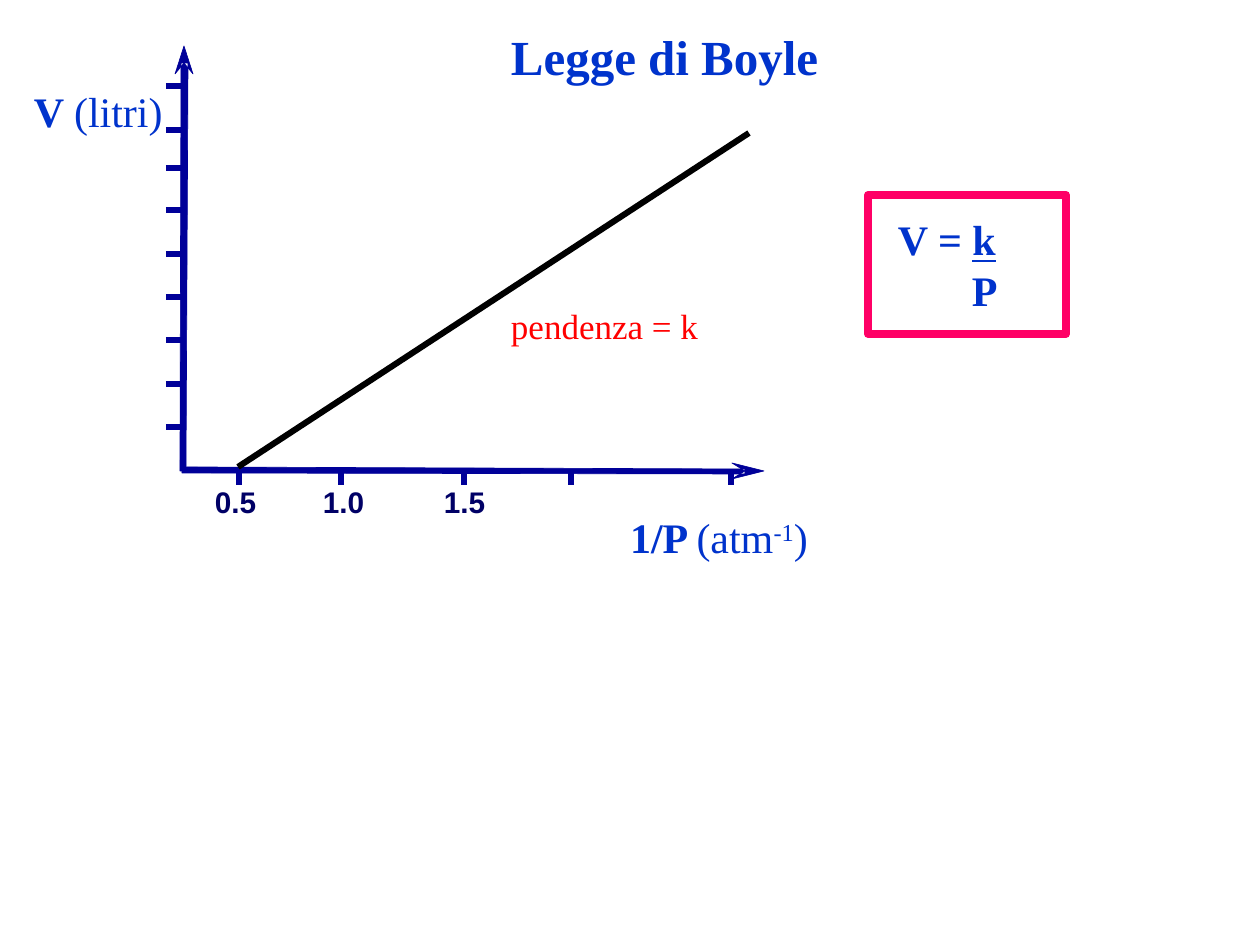
from pptx import Presentation
from pptx.dml.color import RGBColor
from pptx.enum.shapes import MSO_CONNECTOR, MSO_SHAPE
from pptx.oxml.ns import qn
from pptx.util import Inches, Pt
from lxml import etree

PX = 7257  # EMU in one px, at 126 px to the inch
SERIF = "Times New Roman"
BLUE, NAVY, DARK, RED, PINK, BLACK = "0033CC", "000099", "000066", "FF0000", "FF0066", "000000"


def add_run(paragraph, text, size=24, font=SERIF, color=BLUE, bold=False, underline=False, superscript=False):
    run = paragraph.add_run()
    run.text = text
    run.font.size = Pt(size)
    run.font.name = font
    run.font.bold = bold
    run.font.underline = underline
    run.font.color.rgb = RGBColor.from_string(color)
    if superscript:
        run.font._element.set("baseline", "30000")


def add_line(start_x, start_y, end_x, end_y, color):
    line = slide.shapes.add_connector(
        MSO_CONNECTOR.STRAIGHT, start_x * PX, start_y * PX, end_x * PX, end_y * PX)
    line.line.color.rgb = RGBColor.from_string(color)
    line.line.width = Pt(3.5)
    etree.SubElement(line._element.spPr, qn("a:effectLst"))


presentation = Presentation()
presentation.slide_width = Inches(10)
presentation.slide_height = Inches(7.5)
slide = presentation.slides.add_slide(presentation.slide_layouts[6])

# Axes: a thin shaft and a barbed head in one outline
vertical_axis = [
    [(180, 471), (181, 63), (188, 63), (186, 471)],
    [(184, 63), (175, 74), (184, 46), (193, 74)],
]
horizontal_axis = [
    [(182, 467), (745, 469), (745, 474), (182, 473)],
    [(745, 471), (732, 463), (764, 471), (732, 479)],
]
for shaft, head in (vertical_axis, horizontal_axis):
    builder = slide.shapes.build_freeform(*shaft[0], scale=PX)
    builder.add_line_segments(shaft[1:], close=True)
    builder.move_to(*head[0])
    builder.add_line_segments(head[1:], close=True)
    axis = builder.convert_to_shape()
    axis.shadow.inherit = False
    axis.fill.solid()
    axis.fill.fore_color.rgb = RGBColor.from_string(NAVY)
    axis.line.color.rgb = RGBColor.from_string(NAVY)
    axis.line.width = Pt(0.38)

# Tick marks
for y in (86, 130, 168, 210, 254, 297, 340, 384, 427):
    add_line(166, y, 183, y, NAVY)
for x in (239, 341, 464, 571, 731):
    add_line(x, 470, x, 485, NAVY)

# Volume against inverse pressure
add_line(238, 467, 749, 133, BLACK)

# Formula frame
frame = slide.shapes.add_shape(MSO_SHAPE.RECTANGLE, 868 * PX, 195 * PX, 198 * PX, 139 * PX)
frame.shadow.inherit = False
frame.fill.background()
frame.line.color.rgb = RGBColor.from_string(PINK)
frame.line.width = Pt(4.5)

# Labels: box, then paragraphs of (text, format) runs
bold = {"bold": True}
tick_format = {"size": 17, "font": "Arial", "color": DARK, "bold": True}
labels = [
    ((511, 27, 320, 59), [[("Legge di Boyle", {"size": 28, "bold": True})]]),
    ((34, 86, 135, 50), [[("V ", bold), ("(litri)", {})]]),
    ((630, 512, 218, 50), [[("1/P ", bold), ("(atm", {}), ("-1", {"superscript": True}), (")", {})]]),
    ((511, 304, 203, 42), [[("pendenza = k", {"size": 20, "color": RED})]]),
    ((898, 214, 120, 102), [[("V = ", bold), ("k", {"bold": True, "underline": True})], [("P", bold)]]),
]
for x, value in ((215, "0.5"), (323, "1.0"), (444, "1.5")):
    labels.append(((x, 484, 48, 35), [[(value, tick_format)]]))

for box, paragraphs in labels:
    shape = slide.shapes.add_textbox(*(length * PX for length in box))
    frame_text = shape.text_frame
    frame_text.word_wrap = True
    frame_text.margin_left = frame_text.margin_right = 0
    frame_text.margin_top = frame_text.margin_bottom = 0
    for index, runs in enumerate(paragraphs):
        paragraph = frame_text.add_paragraph() if index else frame_text.paragraphs[0]
        if index:  # the denominator stands under the numerator
            paragraph._p.get_or_add_pPr().set("marL", str(74 * PX))
        for text, run_format in runs:
            add_run(paragraph, text, **run_format)

presentation.save("out.pptx")
